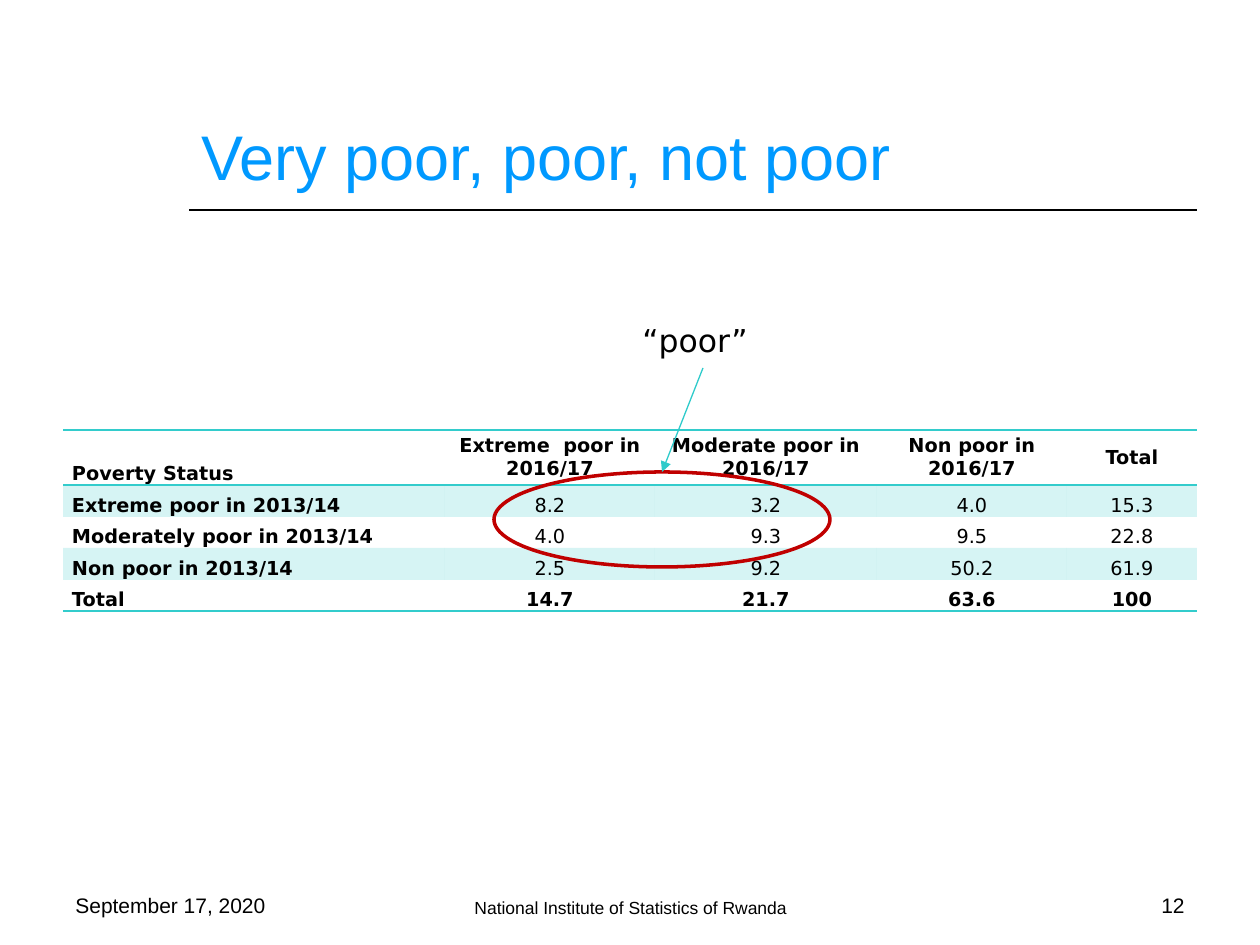
from lxml import etree
from pptx import Presentation
from pptx.dml.color import RGBColor
from pptx.enum.shapes import MSO_CONNECTOR, MSO_SHAPE
from pptx.enum.text import MSO_ANCHOR, PP_ALIGN
from pptx.oxml.ns import qn
from pptx.util import Emu, Pt

LEFT, CENTER, RIGHT = PP_ALIGN.LEFT, PP_ALIGN.CENTER, PP_ALIGN.RIGHT
TOP, MIDDLE, BOTTOM = MSO_ANCHOR.TOP, MSO_ANCHOR.MIDDLE, MSO_ANCHOR.BOTTOM
STRAIGHT = MSO_CONNECTOR.STRAIGHT
EMU_PER_PX = 914400 / 126

COLORS = {"title": "0099FF", "text": "000000", "table": "33CCCC",
          "ring": "C00000", "arrow": "2ECBCB"}
BAND_OPACITY = 20

# text, (left, top, width, height), font, size, color, alignment, anchor
TEXTS = [
    ("Very poor, poor, not poor", (189, 42, 1008, 157), "Arial", 36, "title", LEFT, BOTTOM),
    ("September 17, 2020", (63, 861, 294, 63), "Arial", 12, "text", LEFT, BOTTOM),
    ("National Institute of Statistics of Rwanda", (431, 861, 399, 63), "Arial", 10, "text",
     CENTER, BOTTOM),
    ("12", (903, 861, 294, 63), "Arial", 12, "text", RIGHT, BOTTOM),
    ("“poor”", (630, 315, 136, 50), "DejaVu Sans", 18, "text", LEFT, TOP),
]

ROWS = [
    ("Poverty Status", "Extreme  poor in 2016/17", "Moderate poor in 2016/17",
     "Non poor in 2016/17", "Total"),
    ("Extreme poor in 2013/14", "8.2", "3.2", "4.0", "15.3"),
    ("Moderately poor in 2013/14", "4.0", "9.3", "9.5", "22.8"),
    ("Non poor in 2013/14", "2.5", "9.2", "50.2", "61.9"),
    ("Total", "14.7", "21.7", "63.6", "100"),
]
TABLE_LEFT, TABLE_TOP = 63, 430
COLUMN_WIDTHS = [382, 210, 222, 190, 130]
ROW_HEIGHTS = [55, 32, 31, 32, 31]
CELL_MARGIN = 9

TITLE_RULE = (189, 210, 1197, 210)
RING = (494, 472, 336, 95)
ARROW = (703, 368, 662, 472)


def px(value):
    return Emu(round(value * EMU_PER_PX))


def color(name):
    return RGBColor.from_string(COLORS[name])


def write(paragraph, text, font, size, color_name, alignment, bold=False):
    paragraph.alignment = alignment
    run = paragraph.add_run()
    run.text = text
    run.font.color.rgb = color(color_name)
    for name, value in {"name": font, "size": Pt(size), "bold": bold}.items():
        setattr(run.font, name, value)


def add_text(slide, text, box, font, size, color_name, alignment, anchor):
    frame = slide.shapes.add_textbox(*map(px, box)).text_frame
    frame.word_wrap = True
    frame.vertical_anchor = anchor
    write(frame.paragraphs[0], text, font, size, color_name, alignment)


def add_line(slide, ends, color_name, width):
    line = slide.shapes.add_connector(STRAIGHT, *map(px, ends))
    line.line.color.rgb = color(color_name)
    line.line.width = Pt(width)
    etree.SubElement(line._element.spPr, qn("a:effectLst"))
    return line


def set_borders(cell, ruled_edges):
    properties = cell._tc.get_or_add_tcPr()
    for edge in "LRTB":
        border = etree.SubElement(properties, qn(f"a:ln{edge}"), w=str(Pt(1)))
        if edge in ruled_edges:
            fill = etree.SubElement(border, qn("a:solidFill"))
            etree.SubElement(fill, qn("a:srgbClr"), val=COLORS["table"])
        else:
            etree.SubElement(border, qn("a:noFill"))


def fill_cell(cell, banded):
    if not banded:
        cell.fill.background()
        return
    cell.fill.solid()
    cell.fill.fore_color.rgb = color("table")
    tint = cell._tc.tcPr.find(qn("a:solidFill")).find(qn("a:srgbClr"))
    etree.SubElement(tint, qn("a:alpha"), val=str(BAND_OPACITY * 1000))


def add_poverty_table(slide):
    table = slide.shapes.add_table(
        len(ROWS), len(COLUMN_WIDTHS), px(TABLE_LEFT), px(TABLE_TOP),
        px(sum(COLUMN_WIDTHS)), px(sum(ROW_HEIGHTS))).table
    table.first_row = table.horz_banding = False
    for column, width in zip(table.columns, COLUMN_WIDTHS):
        column.width = px(width)
    for row, height in zip(table.rows, ROW_HEIGHTS):
        row.height = px(height)

    last = len(ROWS) - 1
    for r, values in enumerate(ROWS):
        ruled_edges = ("T" if r in (0, 1) else "") + ("B" if r in (0, last) else "")
        for c, value in enumerate(values):
            cell = table.cell(r, c)
            layout = {"margin_left": px(CELL_MARGIN), "margin_right": px(CELL_MARGIN),
                      "margin_top": 0, "margin_bottom": 0,
                      "vertical_anchor": MIDDLE if r == 0 and c else BOTTOM}
            for name, setting in layout.items():
                setattr(cell, name, setting)
            set_borders(cell, ruled_edges)
            fill_cell(cell, banded=r % 2 == 1)
            write(cell.text_frame.paragraphs[0], value, "DejaVu Sans", 11, "text",
                  CENTER if c else LEFT, bold=r in (0, last) or c == 0)


def add_poor_callout(slide):
    ring = slide.shapes.add_shape(MSO_SHAPE.OVAL, *map(px, RING))
    ring.shadow.inherit = False
    ring.fill.background()
    ring.line.color.rgb = color("ring")
    ring.line.width = Pt(2)
    arrow = add_line(slide, ARROW, "arrow", 0.75)
    arrow.end_connect(ring, 0)
    etree.SubElement(arrow.line._get_or_add_ln(), qn("a:tailEnd"), type="triangle")


def main():
    presentation = Presentation()
    presentation.slide_width, presentation.slide_height = px(1260), px(945)
    slide = presentation.slides.add_slide(presentation.slide_layouts[6])
    add_line(slide, TITLE_RULE, "text", 1)
    add_poverty_table(slide)
    add_poor_callout(slide)
    for text in TEXTS:
        add_text(slide, *text)
    presentation.save("out.pptx")


if __name__ == "__main__":
    main()
